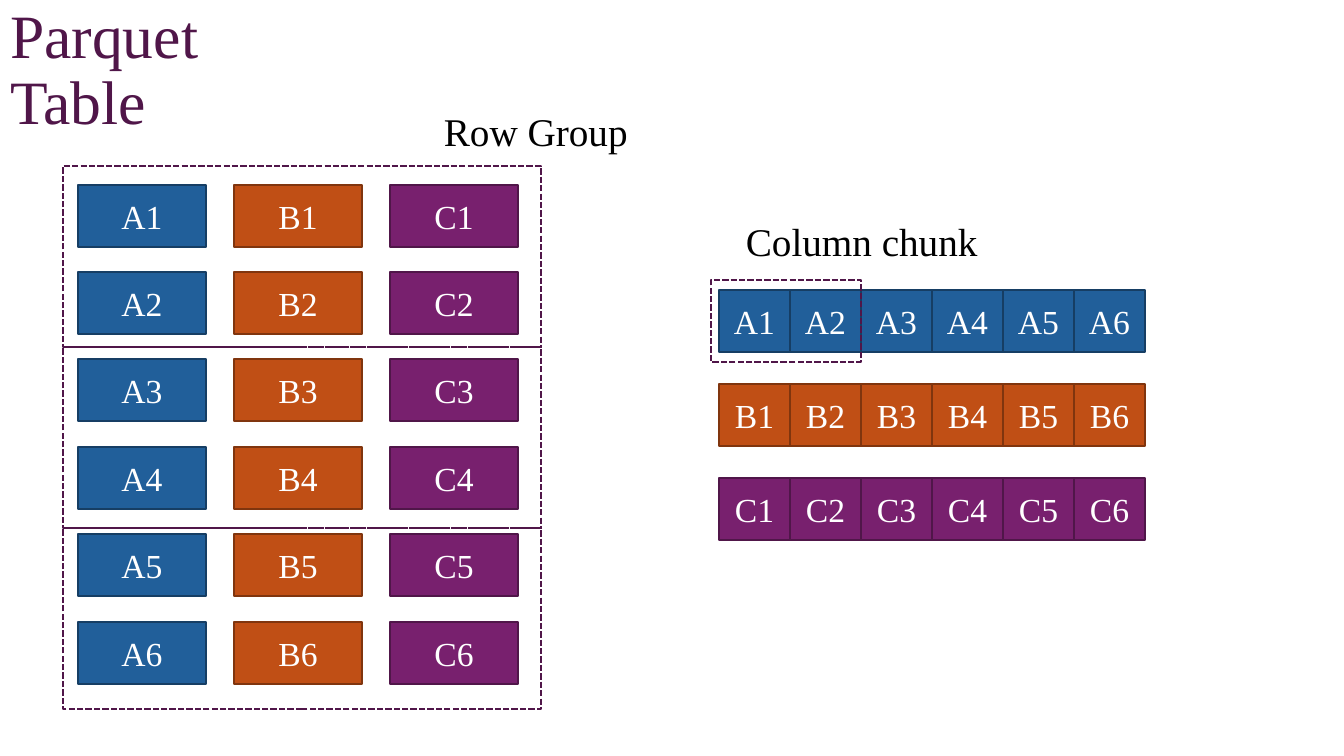
from pptx import Presentation
from pptx import util as u
from pptx.dml.color import RGBColor
from pptx.enum import dml, shapes, text

COLORS = {
    "A": "215F9A", "A edge": "163E64",
    "B": "C04F15", "B edge": "80350E",
    "C": "78206E", "C edge": "501649",
    "accent": "501649", "white": "FFFFFF", "black": "000000",
}


class ParquetSlide:
    """Holds the style and the current slide, with one method per kind of element."""

    scale = 12192000 / 1344
    font = "Times New Roman"

    def __init__(self, deck):
        deck.slide_width, deck.slide_height = self.emu(1344), self.emu(756)
        self.slide = deck.slides.add_slide(deck.slide_layouts[5])

    def emu(self, px):
        return u.Emu(round(px * self.scale))

    def color(self, name):
        return RGBColor.from_string(COLORS[name])

    def set_words(self, holder, words, size, color, paragraph_format, frame_format):
        frame = holder.text_frame
        frame.text = words
        paragraph = frame.paragraphs[0]
        font_format = {"name": self.font, "size": u.Pt(size)}
        for target, values in ((frame, {"word_wrap": True, **frame_format}),
                               (paragraph, paragraph_format),
                               (paragraph.font, font_format)):
            for key, value in values.items():
                setattr(target, key, value)
        paragraph.font.color.rgb = self.color(color)

    def title(self, words, *box):
        heading = self.slide.shapes.title
        for side, px in zip(("left", "top", "width", "height"), box):
            setattr(heading, side, self.emu(px))
        self.set_words(heading, words, 44, "accent",
                       {"alignment": text.PP_ALIGN.LEFT, "line_spacing": 0.9},
                       {"vertical_anchor": text.MSO_ANCHOR.TOP,
                        "auto_size": text.MSO_AUTO_SIZE.NONE})

    def label(self, words, *box):
        caption = self.slide.shapes.add_textbox(*map(self.emu, box))
        self.set_words(caption, words, 28, "black", {"alignment": text.PP_ALIGN.LEFT},
                       {"auto_size": text.MSO_AUTO_SIZE.SHAPE_TO_FIT_TEXT})

    def rectangle(self, edge, *box):
        outline = self.slide.shapes.add_shape(
            shapes.MSO_SHAPE.RECTANGLE, *map(self.emu, box))
        outline.shadow.inherit = False
        outline.line.color.rgb = self.color(edge)
        outline.line.width = u.Pt(1.5)
        return outline

    def cell(self, column, row, *box):
        value = self.rectangle(f"{column} edge", *box)
        value.fill.solid()
        value.fill.fore_color.rgb = self.color(column)
        self.set_words(value, f"{column}{row}", 24, "white",
                       {"alignment": text.PP_ALIGN.CENTER},
                       {"vertical_anchor": text.MSO_ANCHOR.MIDDLE})

    def dashed_frame(self, *box):
        group = self.rectangle("accent", *box)
        group.fill.background()
        group.line.dash_style = dml.MSO_LINE.SQUARE_DOT


def main():
    deck = Presentation()
    page = ParquetSlide(deck)
    page.title("Parquet Table", 0, 0, 302, 141)

    for row in range(6):
        for index, column in enumerate("ABC"):
            page.cell(column, row + 1, 78 + 156 * index, 185 + 437 * row // 5, 128, 62)
    for index, column in enumerate("ABC"):
        for row in range(6):
            page.cell(column, row + 1, 719 + 71 * row, 290 + 94 * index, 71, 62)

    for group in range(3):
        page.dashed_frame(63, 166 + 181 * group, 478, 181)
    page.label("Row Group", 434, 102, 284, 57)
    page.label("Column chunk", 736, 212, 284, 57)
    page.dashed_frame(711, 280, 150, 82)

    deck.save("out.pptx")


if __name__ == "__main__":
    main()
